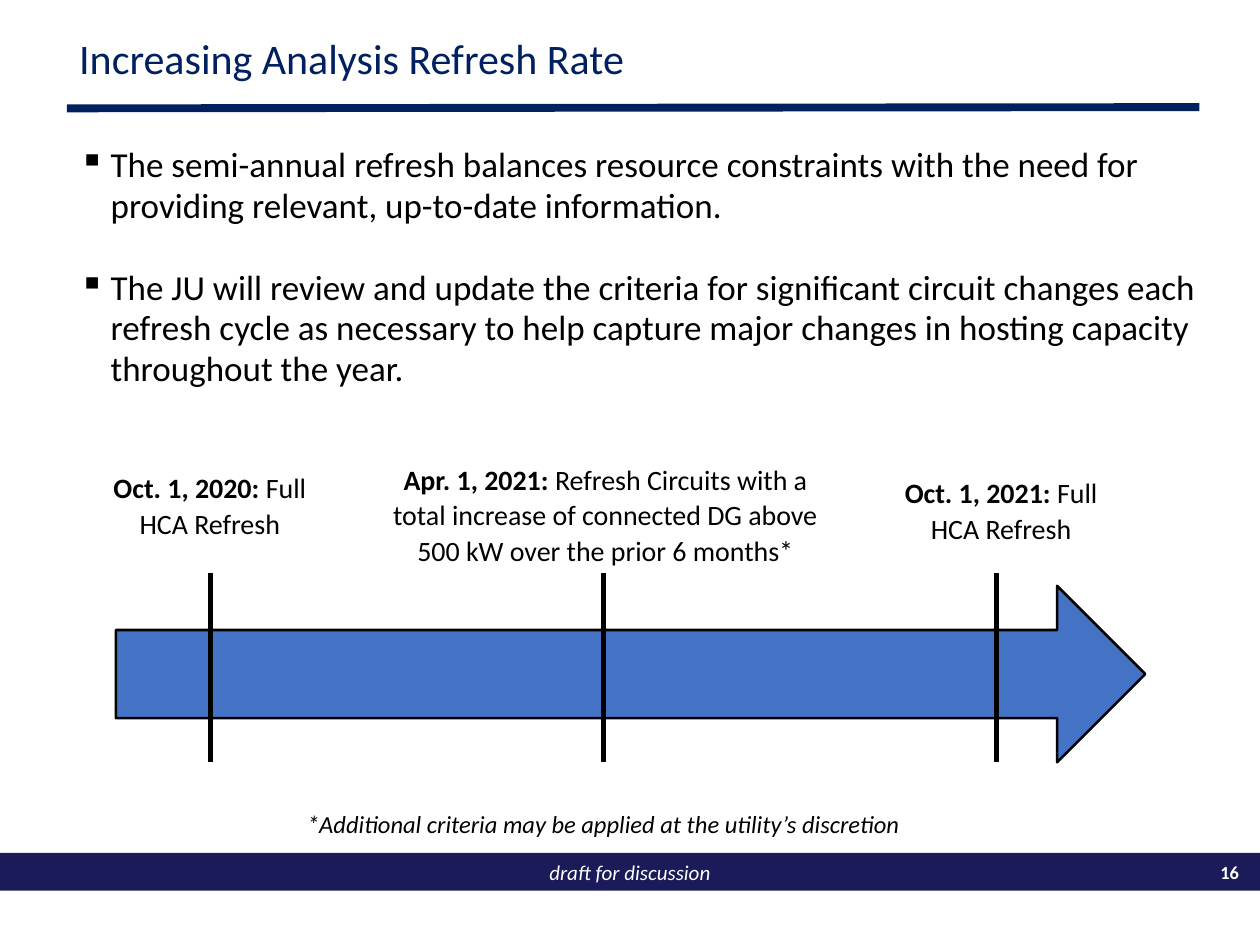
"""Build the slide on the hosting capacity analysis refresh rate."""
from lxml import etree
from pptx import Presentation
from pptx.dml.color import RGBColor
from pptx.enum.shapes import MSO_CONNECTOR, MSO_SHAPE
from pptx.enum.text import MSO_ANCHOR, PP_ALIGN
from pptx.oxml.ns import qn
from pptx.util import Inches, Pt

LEFT, CENTER, RIGHT = PP_ALIGN.LEFT, PP_ALIGN.CENTER, PP_ALIGN.RIGHT
TOP, MIDDLE = MSO_ANCHOR.TOP, MSO_ANCHOR.MIDDLE
STRAIGHT = MSO_CONNECTOR.STRAIGHT
RECTANGLE, RIGHT_ARROW = MSO_SHAPE.RECTANGLE, MSO_SHAPE.RIGHT_ARROW

THEME = {
    "font": "Calibri",
    "navy": RGBColor(0x00, 0x20, 0x60),
    "band": RGBColor(0x1B, 0x1B, 0x59),
    "blue": RGBColor(0x44, 0x72, 0xC4),
    "black": RGBColor(0x00, 0x00, 0x00),
    "white": RGBColor(0xFF, 0xFF, 0xFF),
    "title": 24, "body": 20, "label": 16, "note": 14, "footer": 12, "page": 10.5,
}

prs = Presentation()
prs.slide_width, prs.slide_height = Inches(10), Inches(7.5)
COL, ROW = prs.slide_width / 100, prs.slide_height / 75
s = prs.slides.add_slide(prs.slide_layouts[6])


def add_text(box, runs, size, color, align=LEFT, anchor=TOP, spacing=1.0):
    """Put a text box on the grid; each run is (text, style)."""
    x, y, w, h = box
    sp = s.shapes.add_textbox(int(x * COL), int(y * ROW), int(w * COL), int(h * ROW))
    tf = sp.text_frame
    tf.word_wrap, tf.vertical_anchor = True, anchor
    p = tf.paragraphs[0]
    for text, style in runs:
        if text == "\n":
            p = tf.add_paragraph()
            continue
        p.alignment, p.line_spacing = align, spacing
        r = p.add_run()
        r.text = text
        r.font.name, r.font.size = THEME["font"], Pt(THEME[size])
        r.font.color.rgb = THEME[color]
        r.font.bold, r.font.italic = style == "bold", style == "italic"
    return tf


def add_line(x1, y1, x2, y2, color, width):
    """Draw a straight line between two grid points."""
    sp = s.shapes.add_connector(
        STRAIGHT, int(x1 * COL), int(y1 * ROW), int(x2 * COL), int(y2 * ROW))
    sp.line.color.rgb, sp.line.width = THEME[color], Pt(width)
    etree.SubElement(sp._element.spPr, qn("a:effectLst"))


for preset, (x, y, w, h), fill in (
    (RECTANGLE, (0, 67.7, 100, 3), "band"),
    (RIGHT_ARROW, (9.2, 46.5, 81.7, 14), "blue"),
):
    sp = s.shapes.add_shape(preset, int(x * COL), int(y * ROW), int(w * COL), int(h * ROW))
    sp.shadow.inherit = False
    sp.fill.solid()
    sp.fill.fore_color.rgb = THEME[fill]
    if preset == RIGHT_ARROW:
        sp.line.color.rgb, sp.line.width = THEME["black"], Pt(1.5)
    else:
        sp.line.fill.background()

add_text((0, 67.7, 100, 3), [("draft for discussion", "italic")],
         "footer", "white", CENTER, MIDDLE)
add_text((95.2, 67.8, 4.1, 2.9), [("16", "bold")], "page", "white", RIGHT, MIDDLE)
add_line(5.3, 8.6, 95.2, 8.5, "navy", 4.5)
add_text((5.3, 2.6, 89.9, 4.5), [("Increasing Analysis Refresh Rate", "")],
         "title", "navy", LEFT, MIDDLE, 0.9)

tf = add_text((5.3, 11, 92.3, 22), [
    ("The semi-annual refresh balances resource constraints with the need for "
     "providing relevant, up-to-date information.", ""),
    ("\n", ""),
    ("The JU will review and update the criteria for significant circuit changes each "
     "refresh cycle as necessary to help capture major changes in hosting capacity "
     "throughout the year.", ""),
], "body", "black", spacing=0.97)
tf.paragraphs[1].space_before = Pt(23.5)
for p in tf.paragraphs:
    pPr = p._p.get_or_add_pPr()
    pPr.set("marL", str(Inches(0.25)))
    pPr.set("indent", str(-Inches(0.25)))
    etree.SubElement(pPr, qn("a:buChar"), char="▪")

milestones = (
    ((7.9, 36.7, 17.5, 7.6), "Oct. 1, 2020: ", "Full HCA Refresh"),
    ((30, 36, 36.1, 11.6), "Apr. 1, 2021: ",
     "Refresh Circuits with a total increase of connected DG above 500 kW "
     "over the prior 6 months*"),
    ((70.7, 37.1, 17.5, 8.9), "Oct. 1, 2021: ", "Full HCA Refresh"),
)
for i, (box, date, action) in enumerate(milestones):
    x = 16.7 + 31.2 * i
    add_line(x, 45.5, x, 60.5, "black", 3)
    add_text(box, [(date, "bold"), (action, "")], "label", "black", CENTER, spacing=1.07)

add_text((19.1, 63.7, 57.6, 3.4),
         [("*Additional criteria may be applied at the utility’s discretion", "italic")],
         "note", "black", CENTER)

prs.save("out.pptx")
